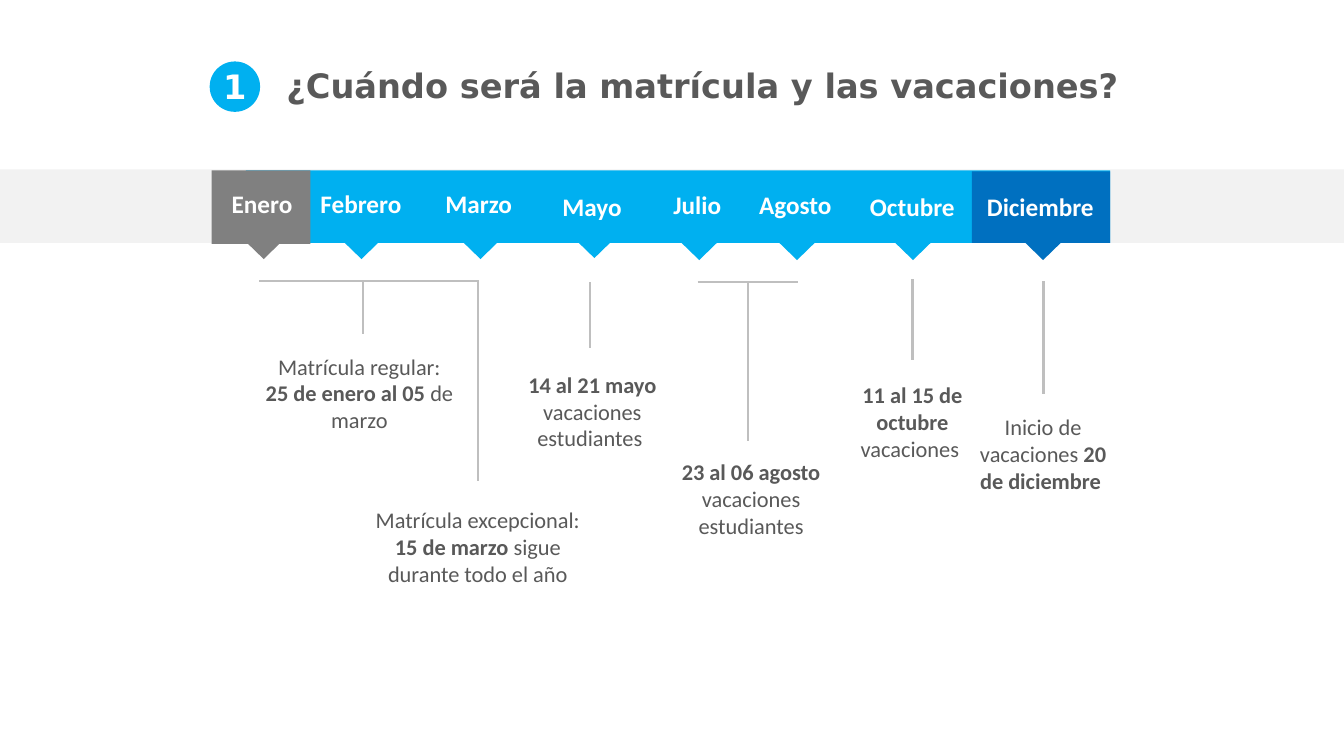
from lxml.etree import SubElement
from pptx import Presentation
from pptx.dml.color import RGBColor
from pptx.enum.shapes import MSO_CONNECTOR as CONN, MSO_SHAPE as SHAPE
from pptx.enum.text import MSO_ANCHOR as ANCHOR, MSO_AUTO_SIZE as AUTO, PP_ALIGN as ALIGN
from pptx.oxml.ns import qn
from pptx.util import Pt

PX = 9144
COLORS = {
    "white": "FFFFFF", "band": "F2F2F2", "cyan": "00B0F0", "gray": "808080",
    "blue": "0070C0", "text": "595959", "line": "BFBFBF",
}
MONTHS = [
    ("Febrero", 308, 182, 100), ("Marzo", 432, 182, 87),
    ("Mayo", 548, 185, 79), ("Julio", 658, 183, 68),
    ("Agosto", 743, 183, 92), ("Octubre", 853, 185, 105),
    ("Diciembre", 969, 185, 127), ("Enero", 220, 182, 80),
]
CARDS = [
    ((253, 345, 207, 91),
     [("Matrícula regular: ", False), ("25 de enero al 05 ", True), ("de marzo", False)]),
    ((356, 497, 236, 91),
     [("Matrícula excepcional: ", False), ("15 de marzo", True),
      (" sigue durante todo el año", False)]),
]
NOTES = [
    ((477, 363, 221, 91), [("14 al 21 mayo ", True), ("vacaciones estudiantes ", False)]),
    ((652, 450, 186, 91), [("23 al 06 agosto ", True), ("vacaciones estudiantes", False)]),
    ((818, 373, 174, 93), [("11 al 15 de octubre ", True), ("vacaciones ", False)]),
    ((962, 405, 145, 118), [("Inicio de vacaciones ", False), ("20 de diciembre ", True)]),
]
LINES = [
    (360, 279, 360, 331), (474, 279, 474, 477), (585, 280, 585, 345),
    (742, 280, 742, 438), (692, 280, 791, 280), (905, 277, 905, 357),
    (1035, 279, 1035, 391), (257, 279, 475, 279),
]
POINTERS = [
    (888, 241, "cyan"), (773, 241, "cyan"), (676, 241, "cyan"), (572, 239, "cyan"),
    (459, 240, "cyan"), (341, 240, "cyan"), (244, 240, "gray"), (1017, 241, "blue"),
]


def rgb(name):
    return RGBColor.from_string(COLORS[name])


def emu(lengths):
    return [v * PX for v in lengths]


def add_shape(s, kind, at, fill, line=None):
    sp = s.shapes.add_shape(kind, *emu(at))
    sp.shadow.inherit = False
    sp.fill.solid()
    sp.fill.fore_color.rgb = rgb(fill)
    if line:
        sp.line.color.rgb = rgb(line)
        sp.line.width = Pt(0.5)
    else:
        sp.line.fill.background()
    return sp


def write(sp, runs, size=16, font="Calibri", color="text", align=ALIGN.CENTER,
          wrap=True, grow=True, anchor=ANCHOR.TOP, spacing=None, insets=(10, 5, 10, 5)):
    tf = sp.text_frame
    tf.word_wrap = wrap
    tf.auto_size = AUTO.SHAPE_TO_FIT_TEXT if grow else AUTO.NONE
    tf.vertical_anchor = anchor
    tf.margin_left, tf.margin_top, tf.margin_right, tf.margin_bottom = emu(insets)
    p = tf.paragraphs[0]
    p.alignment = align
    if spacing:
        p.line_spacing = spacing
    for text, bold in runs:
        r = p.add_run()
        r.text = text
        r.font.size = Pt(size)
        r.font.name = font
        r.font.bold = bold
        r.font.color.rgb = rgb(color)


def add_text(s, at, runs, **fmt):
    write(s.shapes.add_textbox(*emu(at)), runs, **fmt)


def add_line(s, ends):
    c = s.shapes.add_connector(CONN.STRAIGHT, *emu(ends))
    c.line.color.rgb = rgb("line")
    c.line.width = Pt(1.5)
    SubElement(c._element.spPr, qn("a:effectLst"))


def add_pointer(s, x, y, color):
    add_shape(s, SHAPE.ISOSCELES_TRIANGLE, (x, y, 35, 17), color).rotation = 180


def add_heading(s):
    fmt = dict(size=24, font="DejaVu Sans", grow=False, anchor=ANCHOR.MIDDLE)
    add_text(s, (244, 67, 1059, 39),
             [("¿Cuándo será la matrícula y las vacaciones?", True)],
             align=ALIGN.LEFT, spacing=0.9, insets=(40, 7, 7, 7), **fmt)
    add_shape(s, SHAPE.OVAL, (208, 61, 50, 50), "cyan")
    add_text(s, (208, 68, 50, 43), [("1", True)], color="white", spacing=0.8, **fmt)


def main():
    prs = Presentation()
    prs.slide_width, prs.slide_height = emu((1333, 750))
    s = prs.slides.add_slide(prs.slide_layouts[6])
    for at, fill in [((0, 168, 1333, 73), "band"), ((244, 169, 857, 72), "cyan"),
                     ((210, 169, 98, 73), "gray"), ((964, 170, 137, 71), "blue")]:
        add_shape(s, SHAPE.RECTANGLE, at, fill)
    for month, x, y, w in MONTHS:
        add_text(s, (x, y, w, 40), [(month, True)], size=18, color="white",
                 align=ALIGN.LEFT, wrap=False)
    for at, runs in CARDS:
        write(add_shape(s, SHAPE.RECTANGLE, at, "white", line="white"), runs)
    for at, runs in NOTES:
        add_text(s, at, runs)
    for ends in LINES:
        add_line(s, ends)
    add_heading(s)
    for x, y, color in POINTERS:
        add_pointer(s, x, y, color)
    prs.save("out.pptx")


if __name__ == "__main__":
    main()
